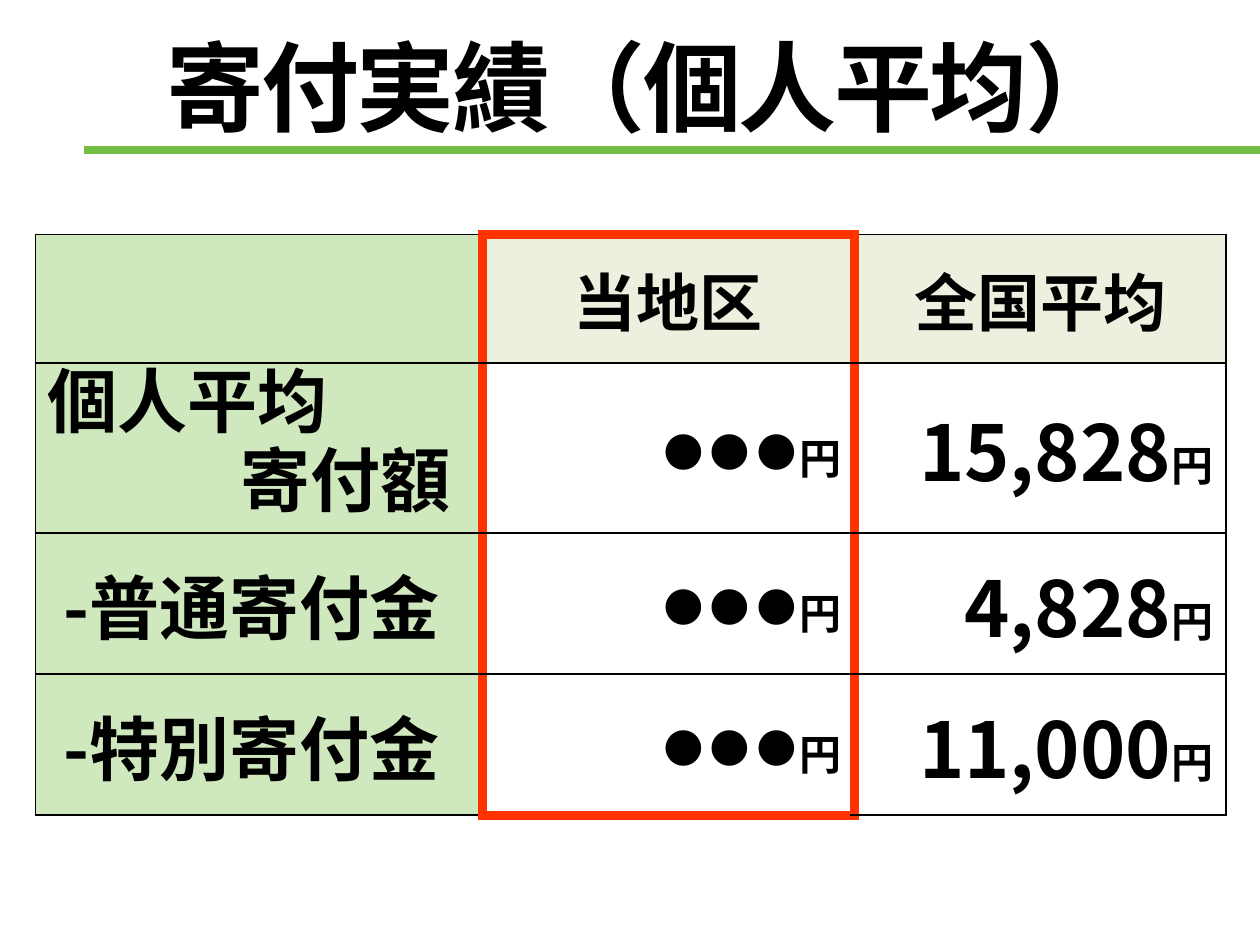
"""Build the slide comparing the district's average donation with the national average."""
import pptx
import pptx.dml.color
import pptx.enum.shapes
import pptx.enum.text
import pptx.oxml
import pptx.oxml.ns
import pptx.util

Inches, Pt = pptx.util.Inches, pptx.util.Pt
ALIGN = pptx.enum.text.PP_ALIGN
MIDDLE = pptx.enum.text.MSO_ANCHOR.MIDDLE
NS = pptx.oxml.ns.nsdecls("a")
JAPANESE = "Noto Sans CJK JP"


def rgb(value):
    return pptx.dml.color.RGBColor.from_string(value)


def add_run(paragraph, text, size, family=JAPANESE, bold=True):
    run = paragraph.add_run()
    run.text = text
    for name, value in {"size": Pt(size), "name": family, "bold": bold}.items():
        setattr(run.font, name, value)
    run.font.color.rgb = rgb("000000")
    run.font._element.find(pptx.oxml.ns.qn("a:latin")).addnext(
        pptx.oxml.parse_xml(f'<a:ea {NS} typeface="{family}"/>'))
    return run


presentation = pptx.Presentation()
presentation.slide_width, presentation.slide_height = Inches(10), Inches(7.5)
slide = presentation.slides.add_slide(presentation.slide_layouts[6])

underline = slide.shapes.add_connector(
    pptx.enum.shapes.MSO_CONNECTOR.STRAIGHT,
    Inches(0.67), Inches(1.19), Inches(10), Inches(1.19))
underline.line.color.rgb = rgb("75BC44")
underline.line.width = Pt(4.5)
underline._element.spPr.append(pptx.oxml.parse_xml(f"<a:effectLst {NS}/>"))

heading = slide.shapes.add_textbox(Inches(1.22), Inches(0.13), Inches(8.78), Inches(1.1))
for name, value in {"word_wrap": True, "vertical_anchor": MIDDLE}.items():
    setattr(heading.text_frame, name, value)
heading_run = add_run(heading.text_frame.paragraphs[0], "寄付実績（個人平均）", 56)
heading_run.font._element.set("spc", "-150")

columns = [3.55, 2.95, 2.95]
rows = [1.02, 1.35, 1.12, 1.12]
donations = slide.shapes.add_table(
    len(rows), len(columns), Inches(0.28), Inches(1.86),
    Inches(sum(columns)), Inches(sum(rows))).table
donations.horz_banding = False
for column, width in zip(donations.columns, columns):
    column.width = Inches(width)
for row, height in zip(donations.rows, rows):
    row.height = Inches(height)

content = [
    ["", "当地区", "全国平均"],
    ["個人平均\v寄付額", "●●●", "15,828"],
    [" -普通寄付金", "●●●", "4,828"],
    [" -特別寄付金", "●●●", "11,000"],
]
last = len(rows) - 1
for r, texts in enumerate(content):
    for c, text in enumerate(texts):
        cell = donations.cell(r, c)
        cell.vertical_anchor = MIDDLE
        highlighted = {
            "L": c > 0,
            "R": c < 2,
            "T": c == 1 and r == 0,
            "B": c == 1 and r == last,
        }
        for side, red in highlighted.items():
            color, width = ("FF3300", 6) if red else ("000000", 1)
            cell._tc.get_or_add_tcPr().append(pptx.oxml.parse_xml(
                f'<a:ln{side} {NS} w="{Pt(width)}"><a:solidFill>'
                f'<a:srgbClr val="{color}"/></a:solidFill></a:ln{side}>'))
        cell.fill.solid()
        cell.fill.fore_color.rgb = rgb("CFE8BE" if c == 0 else "EBF1DE" if r == 0 else "FFFFFF")
        paragraph = cell.text_frame.paragraphs[0]
        if c == 0:
            if text:
                first, *rest = text.split("\v")
                add_run(paragraph, first, 40)
                for line in rest:
                    paragraph.add_line_break()
                    add_run(paragraph, line, 40)
                    paragraph.line_spacing = Pt(45)
                    paragraph.space_before = Pt(12)
                    indent = Inches(1.53)
                    for name, value in {"marL": indent, "indent": -indent}.items():
                        paragraph._p.get_or_add_pPr().set(name, str(value))
        elif r == 0:
            paragraph.alignment = ALIGN.CENTER
            add_run(paragraph, text, 36)
        else:
            paragraph.alignment = ALIGN.RIGHT
            add_run(paragraph, text, 44, *(("Calibri", False) if c == 1 else ()))
            add_run(paragraph, "円", 24)

presentation.save("out.pptx")
